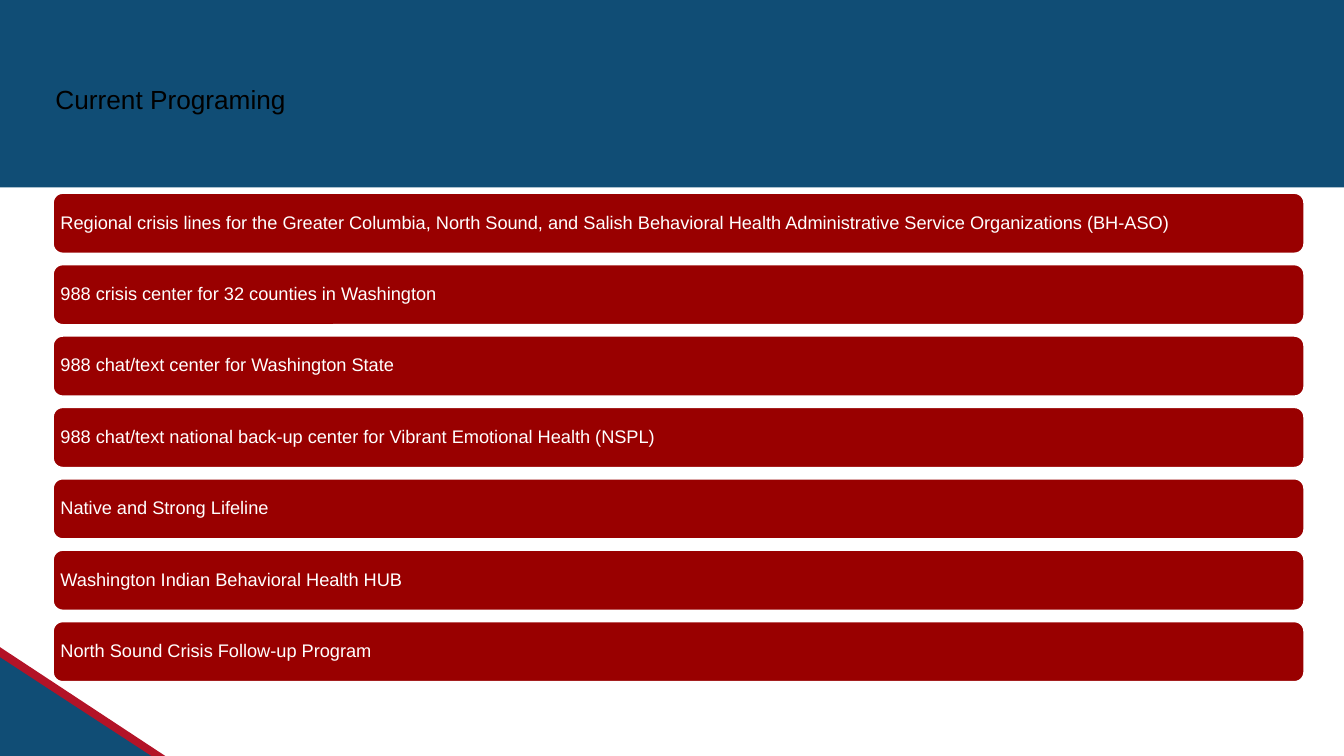
from pptx import Presentation
from pptx.util import Inches, Pt
from pptx.dml.color import RGBColor
from pptx.enum.shapes import MSO_SHAPE
from pptx.enum.text import MSO_ANCHOR, MSO_AUTO_SIZE, PP_ALIGN


class Theme:
    font = "Arial"
    blue = RGBColor.from_string("104D75")
    red = RGBColor.from_string("B31327")
    dark = RGBColor.from_string("990000")
    black = RGBColor.from_string("000000")
    white = RGBColor.from_string("FFFFFF")
    head = Pt(18.7)
    body = Pt(13)


def add_form(kind, left, top, width, height, fill):
    form = slide.shapes.add_shape(
        kind, Inches(left), Inches(top), Inches(width), Inches(height))
    form.shadow.inherit = False
    form.fill.solid()
    form.fill.fore_color.rgb = fill
    form.line.fill.background()
    return form


def set_text(form, text, size, color, inset, anchor):
    frame = form.text_frame
    frame.text = text
    frame.word_wrap = True
    frame.auto_size = MSO_AUTO_SIZE.NONE
    frame.vertical_anchor = anchor
    frame.margin_left = frame.margin_right = Inches(inset)
    frame.margin_top = frame.margin_bottom = Inches(inset)
    para = frame.paragraphs[0]
    para.alignment = PP_ALIGN.LEFT
    para.font.name = Theme.font
    para.font.size = size
    para.font.color.rgb = color
    return para


deck = Presentation()
deck.slide_width, deck.slide_height = Inches(13.33), Inches(7.5)
slide = deck.slides.add_slide(deck.slide_layouts[5])

# Header band and corner triangles
add_form(MSO_SHAPE.RECTANGLE, 0, 0, 13.33, 1.86, Theme.blue)
add_form(MSO_SHAPE.RIGHT_TRIANGLE, 0, 6.42, 1.64, 1.08, Theme.red)
add_form(MSO_SHAPE.RIGHT_TRIANGLE, 0, 6.52, 1.5, 0.98, Theme.blue)

# Title, brought in front of the band
title = slide.shapes.title
title.left, title.top = Inches(0.45), Inches(0.73)
title.width, title.height = Inches(12.42), Inches(0.91)
set_text(title, "Current Programing", Theme.head, Theme.black, 0.1, MSO_ANCHOR.TOP)
title.element.getparent().append(title.element)

# Program bars, evenly spaced
programs = [
    "Regional crisis lines for the Greater Columbia, North Sound, and Salish "
    "Behavioral Health Administrative Service Organizations (BH-ASO)",
    "988 crisis center for 32 counties in Washington",
    "988 chat/text center for Washington State",
    "988 chat/text national back-up center for Vibrant Emotional Health (NSPL)",
    "Native and Strong Lifeline",
    "Washington Indian Behavioral Health HUB",
    "North Sound Crisis Follow-up Program",
]
first, last = 1.91, 6.16
step = (last - first) / (len(programs) - 1)
for row, text in enumerate(programs):
    bar = add_form(MSO_SHAPE.ROUNDED_RECTANGLE,
                   0.52, first + row * step, 12.42, 0.61, Theme.dark)
    bar.line.color.rgb = Theme.white
    bar.line.width = Pt(2)
    para = set_text(bar, text, Theme.body, Theme.white, 0.05, MSO_ANCHOR.MIDDLE)
    para.line_spacing = 0.9

deck.save("out.pptx")
